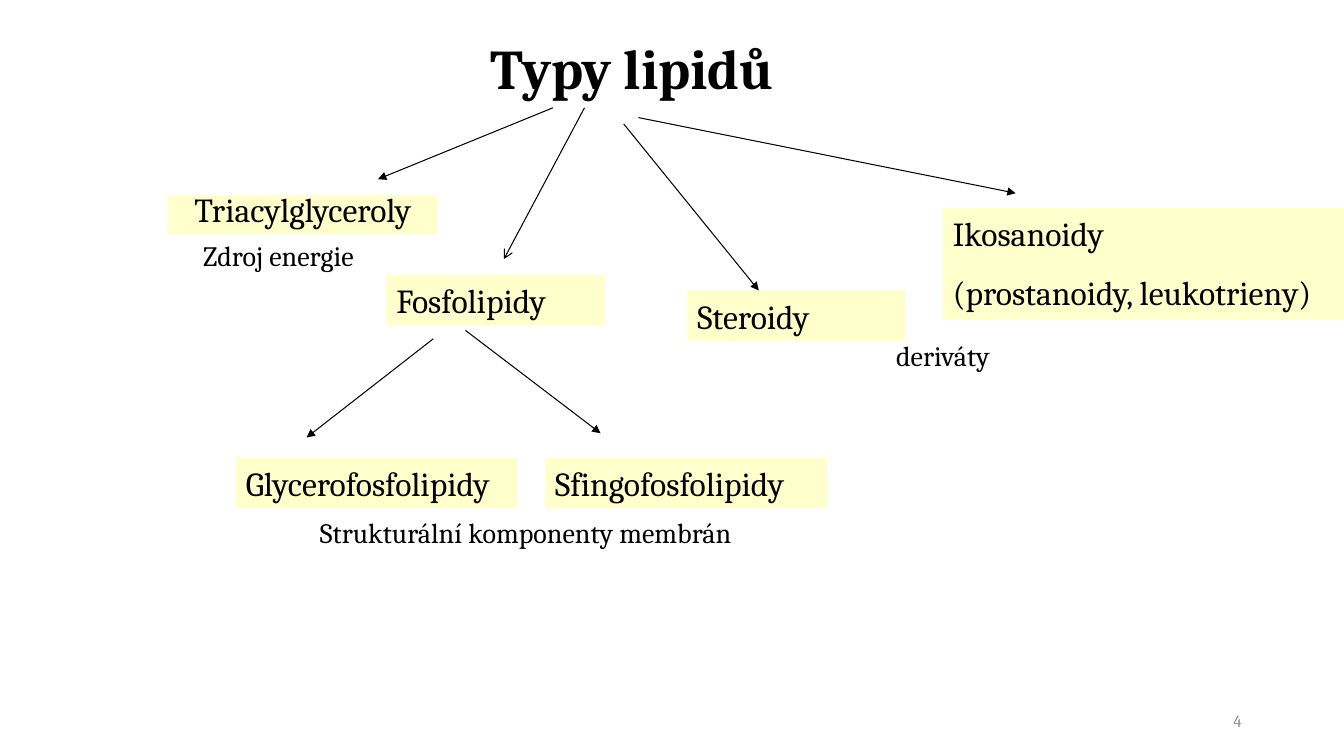
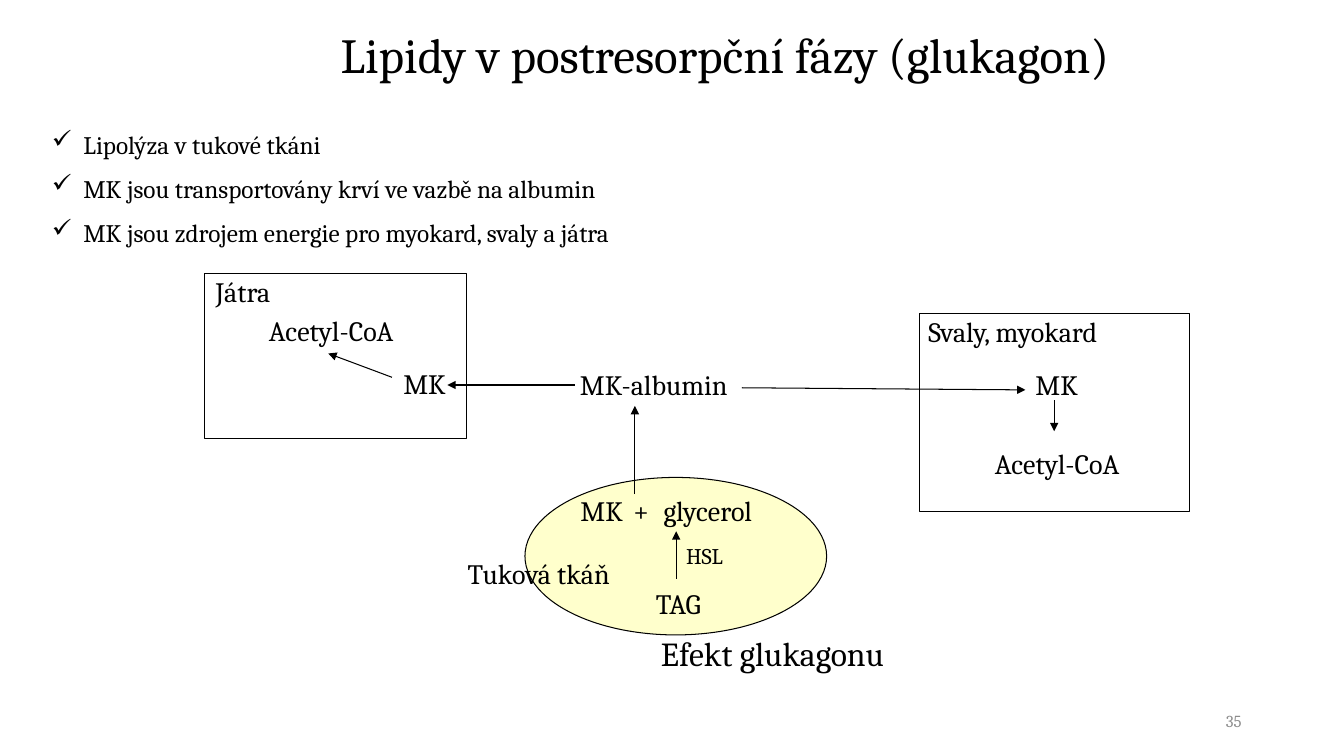
"""Build two slides on lipid types and fasting lipid metabolism."""
from lxml import etree
from pptx import Presentation
from pptx.dml.color import RGBColor
from pptx.enum.shapes import MSO_CONNECTOR, MSO_SHAPE
from pptx.enum.text import MSO_ANCHOR, MSO_AUTO_SIZE, PP_ALIGN
from pptx.oxml.ns import qn
from pptx.util import Pt

LEFT, MID, RIGHT = PP_ALIGN.LEFT, PP_ALIGN.CENTER, PP_ALIGN.RIGHT
TOP, CENTRE = MSO_ANCHOR.TOP, MSO_ANCHOR.MIDDLE
RECT, OVAL = MSO_SHAPE.RECTANGLE, MSO_SHAPE.OVAL
STRAIGHT = MSO_CONNECTOR.STRAIGHT
FIXED = MSO_AUTO_SIZE.NONE
FONT = "Cambria"
HEX = {"ink": "000000", "cream": "FFFFCC", "grey": "8C8C8C"}
THIN = Pt(0.75)
HANG = Pt(22.5)


def shade(name):
    return RGBColor.from_string(HEX[name])


def put(par, text, size, ink="ink", bold=False):
    run = par.add_run()
    run.text = text
    run.font.name = FONT
    run.font.size = Pt(size)
    run.font.bold = bold
    run.font.color.rgb = shade(ink)
    return run


def tick(par):
    props = par._p.get_or_add_pPr()
    props.set("marL", str(HANG))
    props.set("indent", str(-HANG))
    etree.SubElement(props, qn("a:buChar")).set("char", "✓")


def write(frame, lines, size, align=LEFT, ink="ink", list_style=False):
    for i, line in enumerate(lines):
        par = frame.add_paragraph() if i else frame.paragraphs[0]
        if list_style:
            tick(par)
        par.alignment = align
        if i:
            par.space_before = Pt(size * 0.55)
        put(par, line, size, ink)


def label(slide, at, lines, size=20, align=LEFT, ink="ink",
          wrap=True, anchor=TOP, list_style=False):
    frame = slide.shapes.add_textbox(*map(Pt, at)).text_frame
    frame.word_wrap = wrap
    frame.vertical_anchor = anchor
    write(frame, lines, size, align, ink, list_style)
    return frame


def shape(slide, kind, at, fill=None, line=True):
    item = slide.shapes.add_shape(kind, *map(Pt, at))
    item.shadow.inherit = False
    if fill:
        item.fill.solid()
        item.fill.fore_color.rgb = shade(fill)
    else:
        item.fill.background()
    if line:
        item.line.color.rgb = shade("ink")
        item.line.width = THIN
    else:
        item.line.fill.background()
    return item


def card(slide, at, lines, align=LEFT, pitch=None):
    frame = shape(slide, RECT, at, "cream", False).text_frame
    frame.word_wrap = True
    frame.vertical_anchor = TOP
    write(frame, lines, 24, align)
    if pitch:
        frame.paragraphs[0].line_spacing = pitch


def arrow(slide, start, end, tip="triangle"):
    line = slide.shapes.add_connector(STRAIGHT, *map(Pt, start + end))
    line.line.color.rgb = shade("ink")
    line.line.width = THIN
    props = line._element.spPr
    etree.SubElement(line.line._get_or_add_ln(), qn("a:tailEnd")).set("type", tip)
    etree.SubElement(props, qn("a:effectLst"))


def page(deck, title, at, size, number, bold=False):
    slide = deck.slides.add_slide(deck.slide_layouts[5])
    head = slide.shapes.title
    head.left, head.top, head.width, head.height = map(Pt, at)
    frame = head.text_frame
    frame.auto_size = FIXED
    frame.word_wrap = True
    frame.vertical_anchor = CENTRE
    par = frame.paragraphs[0]
    par.alignment = MID
    put(par, title, size, bold=bold)
    label(slide, (678, 500.5, 216, 29), [number], 12, RIGHT, "grey", anchor=CENTRE)
    return slide


def types(deck):
    slide = page(deck, "Typy lipidů", (196.5, 20, 510, 55.5), 40, "4", True)
    card(slide, (120, 139.5, 192.5, 28), ["Triacylglyceroly"], MID, 0.7)
    for x, y, wide, text in (
        (276, 196.5, 156, "Fosfolipidy"),
        (491, 207.5, 156, "Steroidy"),
        (168.5, 327, 201, "Glycerofosfolipidy"),
        (389.5, 327, 201.5, "Sfingofosfolipidy"),
    ):
        card(slide, (x, y, wide, 36), [text])
    card(slide, (673.5, 148.5, 292.5, 80),
         ["Ikosanoidy", "(prostanoidy, leukotrieny)"])
    for start, end in (
        ((395, 77), (270, 128)),
        ((445.5, 88.5), (542, 207.5)),
        ((456, 84), (725.5, 138)),
        ((309.5, 242), (219, 312.5)),
        ((332.5, 236), (429, 309.5)),
    ):
        arrow(slide, start, end)
    arrow(slide, (417.5, 77), (360, 185), "arrow")
    for x, y, wide, text in (
        (138, 167, 187, "Zdroj energie"),
        (633, 238.5, 119, "deriváty"),
        (221.5, 364.5, 349, "Strukturální komponenty membrán"),
    ):
        label(slide, (x, y, wide, 31.5), [text])


def fasting(deck):
    slide = page(deck, "Lipidy v postresorpční fázy (glukagon)",
                 (175.5, 9.5, 685, 58), 35, "35")
    label(slide, (30, 88.5, 567.5, 160), [
        "Lipolýza v tukové tkáni",
        "MK jsou transportovány krví ve vazbě na albumin",
        "MK jsou zdrojem energie pro myokard, svaly a játra",
    ], 18, list_style=True)
    shape(slide, RECT, (146, 195.5, 187.5, 117.5))
    shape(slide, RECT, (657, 224, 193, 141.5))
    shape(slide, OVAL, (375, 341, 215.5, 112.5), "cream")
    for x, y, wide, text in (
        (185, 220.5, 109.5, "Acetyl-CoA"),
        (703.5, 315.5, 109.5, "Acetyl-CoA"),
        (656, 221, 142.5, "Svaly, myokard"),
        (327, 394, 120, "Tuková tkáň"),
        (461.5, 415.5, 49.5, "TAG"),
    ):
        label(slide, (x, y, wide, 31.5), [text], wrap=False)
    for x, y, wide, text in (
        (147, 192.5, 79, "Játra"),
        (281, 258.5, 51, "MK"),
        (732.5, 259, 51, "MK"),
    ):
        label(slide, (x, y, wide, 31), [text])
    label(slide, (402.5, 259, 129, 31), ["MK-albumin"], align=MID)
    par = label(slide, (407.5, 349, 140.5, 31.5), ["MK"], wrap=False).paragraphs[0]
    plus = put(par, " + ", 20)
    plus._r.get_or_add_rPr().set("spc", "300")
    put(par, "glycerol", 20)
    label(slide, (483, 384, 287, 26.5), ["HSL"], 16)
    label(slide, (465, 448.5, 224, 36), ["Efekt glukagonu"], 24)
    for start, end in (
        ((280, 269.5), (234.5, 252.5)),
        ((483, 413.5), (483, 379.5)),
        ((453.5, 353), (453.5, 290)),
        ((410.5, 275), (319.5, 275)),
        ((530, 277), (732.5, 278.5)),
        ((753, 286), (753, 308)),
    ):
        arrow(slide, start, end)


def main():
    deck = Presentation()
    deck.slide_width, deck.slide_height = Pt(960), Pt(540)
    types(deck)
    fasting(deck)
    deck.save("out.pptx")


if __name__ == "__main__":
    main()
